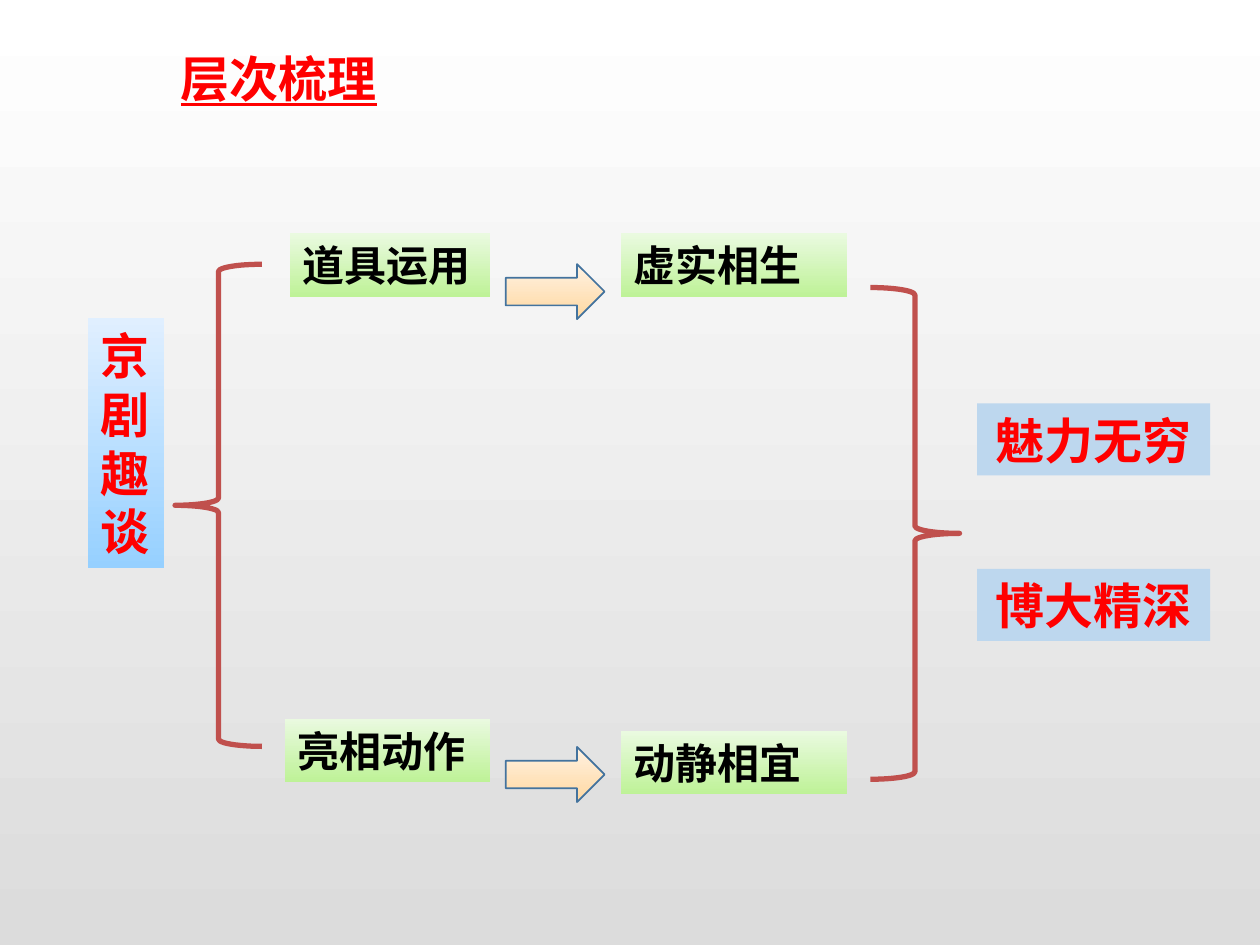
from dataclasses import dataclass

from lxml import etree
from pptx import Presentation
from pptx.dml.color import RGBColor as RGB
from pptx.enum.shapes import MSO_SHAPE as Kind
from pptx.enum.text import MSO_ANCHOR as Anchor, PP_ALIGN as Align
from pptx.oxml.ns import qn
from pptx.util import Pt


@dataclass(frozen=True)
class Theme:
    face: str = "Noto Sans CJK SC"
    red: str = "FF0000"
    black: str = "000000"
    back: tuple = ("FFFFFF", "DCDCDC")
    blue: tuple = ("96D0FF", "E0EFFF")
    green: tuple = ("BEF297", "EAFAE0")
    peach: tuple = ("FFD8A0", "FFF2E3")
    pale: str = "BDD7EE"
    edge: str = "43739E"
    brace: str = "C0504D"
    large: int = 28
    small: int = 24


LOOK = Theme()


def shade(fill, pair, angle=90):
    """Blend two colours; 90 runs upwards, 270 downwards."""
    fill.gradient()
    fill.gradient_angle = angle
    for stop, tone in zip(fill.gradient_stops, pair):
        stop.color.rgb = RGB.from_string(tone)


def write(shape, text, size, color, align=Align.LEFT, line=False):
    frame = shape.text_frame
    frame.text = text
    frame.vertical_anchor = Anchor.MIDDLE
    for para in frame.paragraphs:
        para.alignment = align
        for run in para.runs:
            font = run.font
            font.name, font.size, font.bold = LOOK.face, Pt(size), True
            font.underline = line
            font.color.rgb = RGB.from_string(color)
            east = etree.SubElement(run._r.get_or_add_rPr(), qn("a:ea"))
            east.set("typeface", LOOK.face)


def draw(slide, kind, box, fill=None, edge=None, width=1):
    shape = slide.shapes.add_shape(kind, *map(Pt, box))
    shape.shadow.inherit = False
    if fill is None:
        shape.fill.background()
    elif isinstance(fill, tuple):
        shade(shape.fill, fill)
    else:
        shape.fill.solid()
        shape.fill.fore_color.rgb = RGB.from_string(fill)
    if edge:
        shape.line.color.rgb = RGB.from_string(edge)
        shape.line.width = Pt(width)
    else:
        shape.line.fill.background()
    return shape


def heading(slide, box, text):
    title = slide.shapes.title
    title.left, title.top, title.width, title.height = map(Pt, box)
    write(title, text, LOOK.large, LOOK.red, line=True)
    frame = title.text_frame
    frame.word_wrap = False
    frame.margin_left = frame.margin_right = Pt(9.4)
    frame.margin_top = frame.margin_bottom = Pt(5)


def topic(slide, box, text):
    shape = draw(slide, Kind.RECTANGLE, box, LOOK.blue)
    write(shape, "\n".join(text), LOOK.large, LOOK.red)


def branch(slide, box, cause, effect, inset, drop):
    """Cause, arrow and effect, from left to right in the box."""
    x, y, w, h = box
    tall, wide = 36.2, 129.3
    left = draw(slide, Kind.RECTANGLE,
                (x + inset, y, 117 - inset, tall), LOOK.green)
    write(left, cause, LOOK.small, LOOK.black)
    draw(slide, Kind.RIGHT_ARROW, (x + 126, y + h - 31.5, 56.5, 31.5),
         LOOK.peach, LOOK.edge)
    right = draw(slide, Kind.RECTANGLE,
                 (x + w - wide, y + drop, wide, tall), LOOK.green)
    write(right, effect, LOOK.small, LOOK.black)


def result(slide, box, texts):
    """Labels spread from the top to the bottom of the box."""
    x, y, w, h = box
    tall = 41.2
    step = (h - tall) / (len(texts) - 1)
    for i, text in enumerate(texts):
        shape = draw(slide, Kind.RECTANGLE, (x, y + i * step, w, tall),
                     LOOK.pale)
        write(shape, text, LOOK.large, LOOK.red, Align.CENTER)
        shape.text_frame.word_wrap = False


def main():
    deck = Presentation()
    deck.slide_width, deck.slide_height = Pt(720), Pt(540)
    slide = deck.slides.add_slide(deck.slide_layouts[5])
    shade(slide.background.fill, LOOK.back, 270)

    heading(slide, (94, 22.3, 133, 44), "层次梳理")
    topic(slide, (50.3, 181.7, 43.4, 143), "京剧趣谈")

    # Two lines of thought
    branch(slide, (163, 133.4, 321, 49), "道具运用", "虚实相生", 2.7, 0)
    branch(slide, (163, 410.8, 321, 47.5), "亮相动作", "动静相宜", 0, 7)

    # Braces on either side
    draw(slide, Kind.LEFT_BRACE, (100, 151, 49.7, 275.5),
         edge=LOOK.brace, width=3)
    draw(slide, Kind.RIGHT_BRACE, (497.3, 164.3, 51, 281),
         edge=LOOK.brace, width=3)

    result(slide, (558.4, 230.5, 133.2, 135.8), ("魅力无穷", "博大精深"))
    deck.save("out.pptx")


if __name__ == "__main__":
    main()
